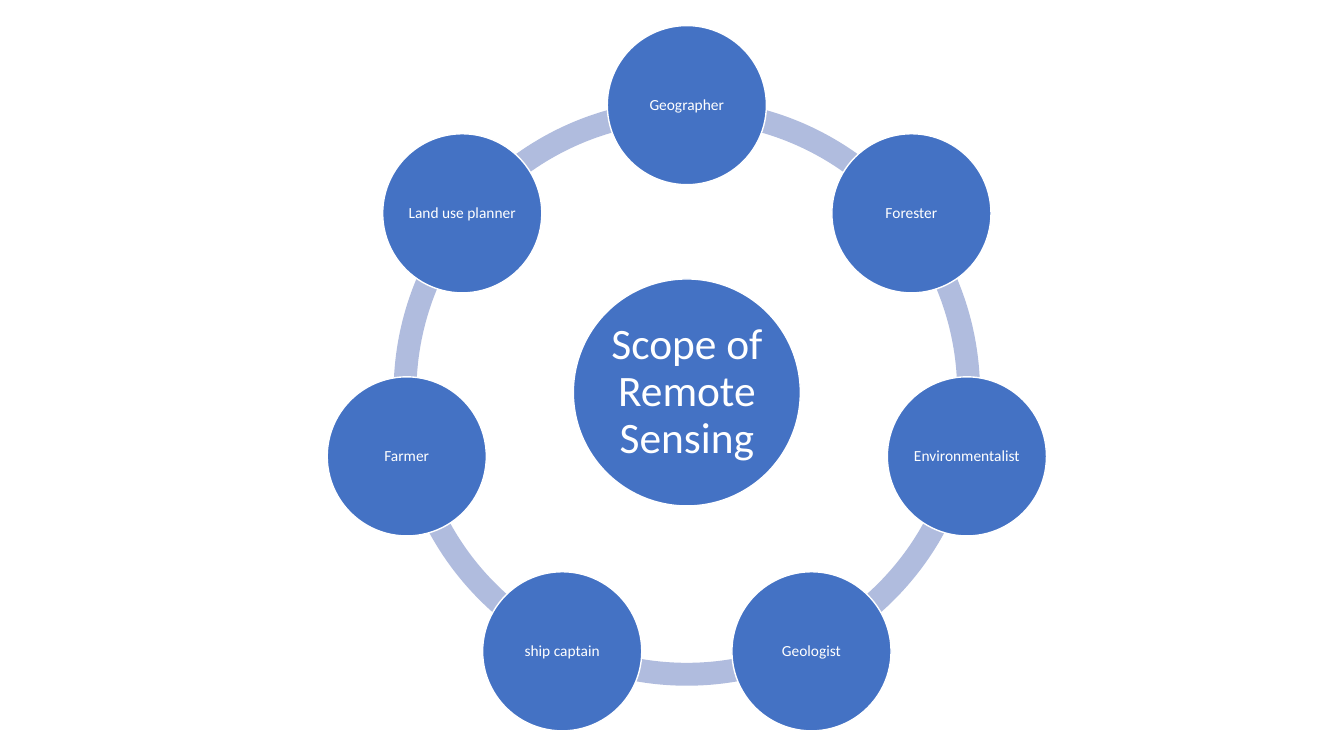
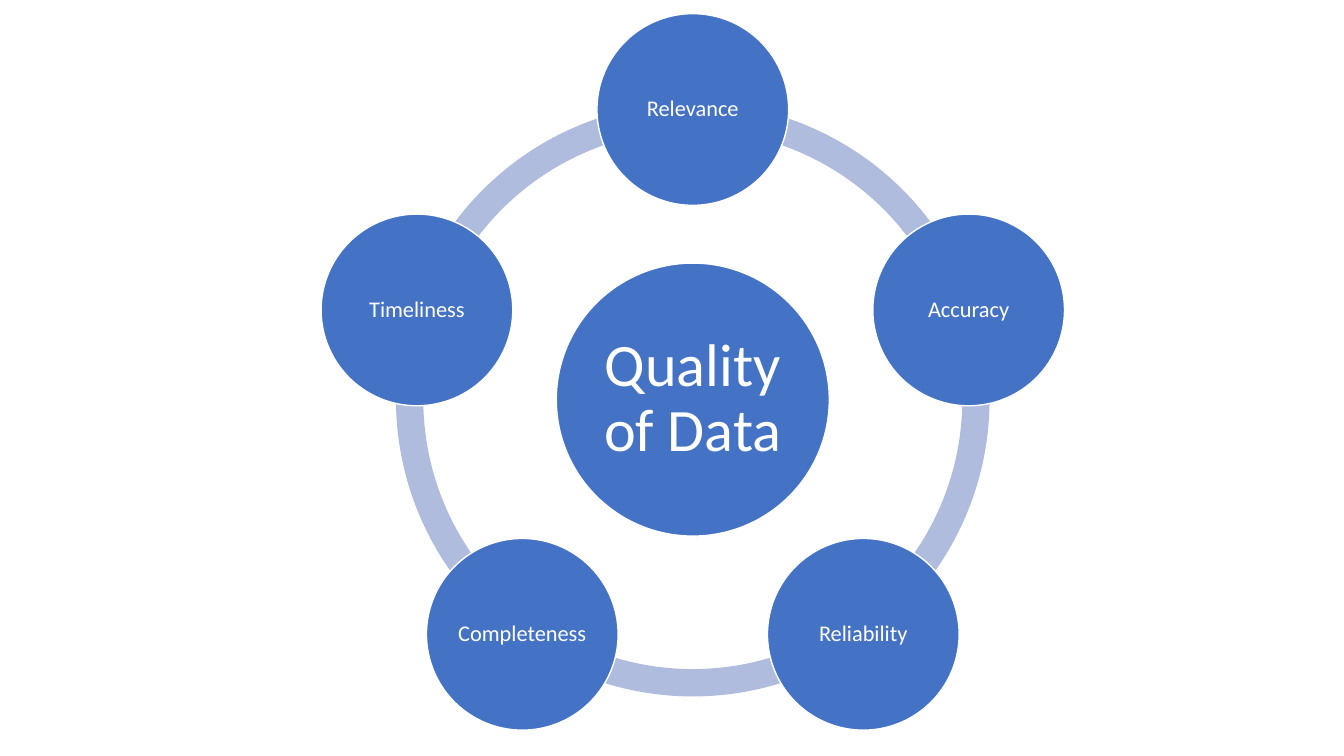
from dataclasses import dataclass
from math import cos, radians, sin

from pptx import Presentation
from pptx.dml.color import RGBColor
from pptx.enum import shapes, text
from pptx.util import Cm, Pt

BLUE, PALE_BLUE, WHITE = "4472C4", "B0BCDE", "FFFFFF"
FONT = "Calibri"
TITLE_ONLY = 5
TOP_ANGLE = 270
ADJUSTMENT_PER_DEGREE = 0.6
INSCRIBED = sin(radians(45))

FRAME_FORMAT = {
    "margin_left": 0,
    "margin_right": 0,
    "margin_top": 0,
    "margin_bottom": 0,
    "word_wrap": True,
    "auto_size": text.MSO_AUTO_SIZE.NONE,
    "vertical_anchor": text.MSO_ANCHOR.MIDDLE,
}
PARAGRAPH_FORMAT = {"alignment": text.PP_ALIGN.CENTER, "line_spacing": 0.9}


@dataclass(frozen=True)
class Wheel:
    topic: str
    topic_size: int
    spokes: tuple[str, ...]
    spoke_size: int
    x: float
    y: float
    orbit: float
    ring: float
    band: float
    hub: float
    satellite: float


WHEELS = (
    Wheel(
        "Scope of Remote Sensing", 31,
        ("Geographer", "Forester", "Environmentalist", "Geologist",
         "ship captain", "Farmer", "Land use planner"), 11,
        x=17.31, y=9.89, orbit=7.24, ring=14.78, band=0.039, hub=5.72, satellite=4.01,
    ),
    Wheel(
        "Quality of Data", 43,
        ("Relevance", "Accuracy", "Reliability", "Completeness", "Timeliness"), 16,
        x=17.46, y=10.07, orbit=7.31, ring=14.96, band=0.046, hub=6.88, satellite=4.83,
    ),
)


def rgb(value: str) -> RGBColor:
    return RGBColor.from_string(value)


def apply(target, values: dict) -> None:
    for name, value in values.items():
        setattr(target, name, value)


def square(x: float, y: float, size: float) -> tuple:
    return Cm(x - size / 2), Cm(y - size / 2), Cm(size), Cm(size)


def write(shape, words: str, size: int) -> None:
    frame = shape.text_frame
    apply(frame, FRAME_FORMAT)
    paragraph = frame.paragraphs[0]
    paragraph.text = words
    apply(paragraph, PARAGRAPH_FORMAT)
    apply(paragraph.font, {"name": FONT, "size": Pt(size)})
    paragraph.font.color.rgb = rgb(WHITE)


def add_filled(slide, kind, x: float, y: float, size: float, colour: str):
    shape = slide.shapes.add_shape(kind, *square(x, y, size))
    shape.shadow.inherit = False
    shape.fill.solid()
    shape.fill.fore_color.rgb = rgb(colour)
    return shape


def add_arc(slide, wheel: Wheel, start: float, end: float) -> None:
    arc = add_filled(slide, shapes.MSO_SHAPE.BLOCK_ARC, wheel.x, wheel.y, wheel.ring, PALE_BLUE)
    arc.line.fill.background()
    settings = (start % 360 * ADJUSTMENT_PER_DEGREE, end % 360 * ADJUSTMENT_PER_DEGREE, wheel.band)
    for index, value in enumerate(settings):
        arc.adjustments[index] = value


def add_circle(slide, x: float, y: float, size: float):
    circle = add_filled(slide, shapes.MSO_SHAPE.OVAL, x, y, size, BLUE)
    circle.line.color.rgb = rgb(WHITE)
    circle.line.width = Pt(1)
    return circle


def add_topic(slide, wheel: Wheel) -> None:
    add_circle(slide, wheel.x, wheel.y, wheel.hub)
    topic = slide.shapes.title
    places = square(wheel.x, wheel.y, wheel.hub * INSCRIBED)
    apply(topic, dict(zip(("left", "top", "width", "height"), places)))
    write(topic, wheel.topic, wheel.topic_size)
    topic.element.getparent().append(topic.element)


def draw_wheel(slide, wheel: Wheel) -> None:
    step = 360 / len(wheel.spokes)
    angles = [TOP_ANGLE + step * index for index in range(len(wheel.spokes))]
    for angle in angles:
        add_arc(slide, wheel, angle, angle + step)
    add_topic(slide, wheel)
    for angle, spoke in zip(angles, wheel.spokes):
        x = wheel.x + wheel.orbit * cos(radians(angle))
        y = wheel.y + wheel.orbit * sin(radians(angle))
        write(add_circle(slide, x, y, wheel.satellite), spoke, wheel.spoke_size)


def main() -> None:
    deck = Presentation()
    deck.slide_width, deck.slide_height = Cm(33.87), Cm(19.05)
    for wheel in WHEELS:
        draw_wheel(deck.slides.add_slide(deck.slide_layouts[TITLE_ONLY]), wheel)
    deck.save("out.pptx")


if __name__ == "__main__":
    main()
